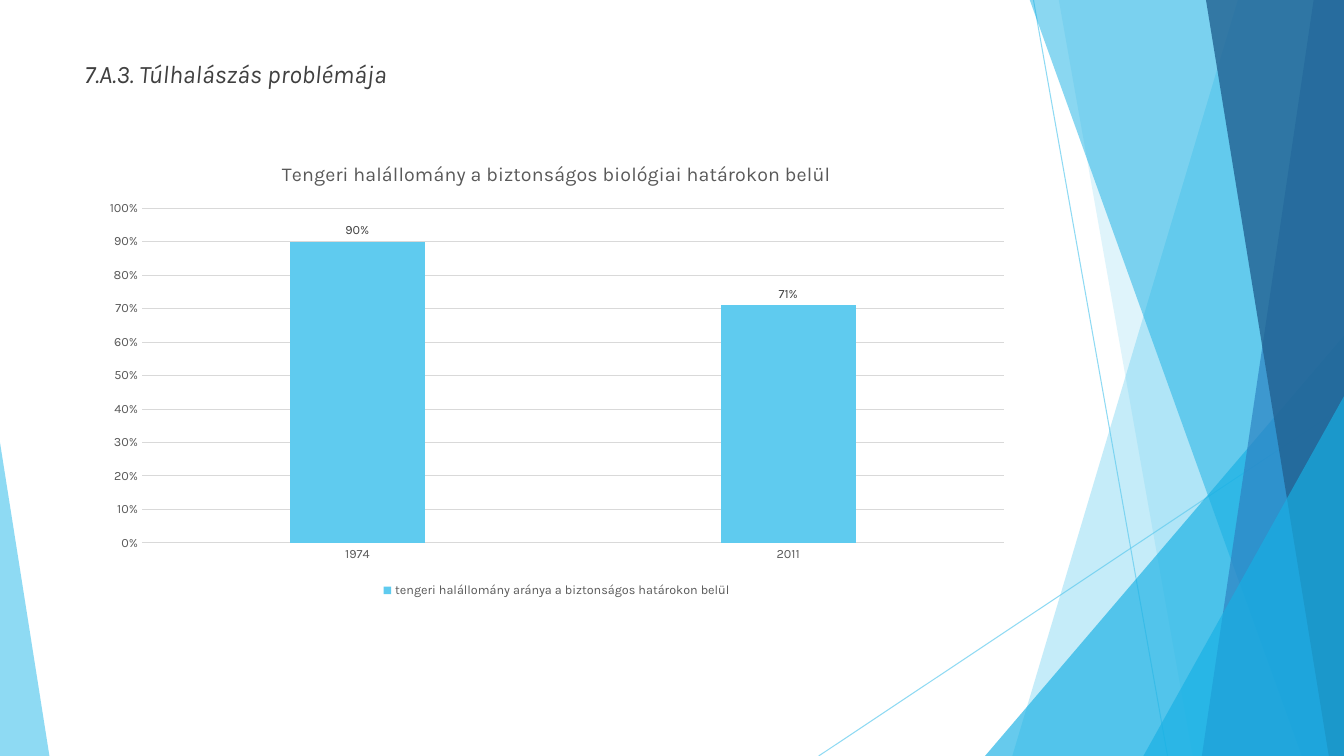
import pptx
import pptx.chart.data
import pptx.dml.color
import pptx.enum.chart
import pptx.enum.shapes
import pptx.oxml.ns
import pptx.util
from lxml import etree

Inches = pptx.util.Inches
Pt = pptx.util.Pt
WIDE, HIGH = 13.33, 7.5
TOP = -0.01
SKY, CYAN, BLUE, NAVY = "5FCBEF", "17B0E4", "2E83C3", "226292"
DARK, GREY, PALE = "404040", "595959", "D9D9D9"


def color(code):
    return pptx.dml.color.RGBColor.from_string(code)


def add(parent, tag, **attrs):
    return etree.SubElement(parent, pptx.oxml.ns.qn(tag), attrs)


class Deck:
    font = "Karla"

    def __init__(self):
        self.prs = pptx.Presentation()
        self.prs.slide_width = Inches(WIDE)
        self.prs.slide_height = Inches(HIGH)
        self.slide = self.prs.slides.add_slide(self.prs.slide_layouts[6])
        self.shapes = self.slide.shapes

    def style(self, font, size, code):
        font.name = self.font
        font.size = Pt(size)
        font.color.rgb = color(code)

    def fade(self, fill, alpha):
        """Set the opacity of a solid fill in percent."""
        tone = fill.find(".//" + pptx.oxml.ns.qn("a:srgbClr"))
        add(tone, "a:alpha", val=str(alpha * 1000))

    def paint(self, shape, code, alpha):
        shape.shadow.inherit = False
        shape.fill.solid()
        shape.fill.fore_color.rgb = color(code)
        shape.line.fill.background()
        self.fade(shape._element.spPr, alpha)

    def line(self, x1, y1, x2, y2):
        line = self.shapes.add_connector(
            pptx.enum.shapes.MSO_CONNECTOR.STRAIGHT,
            Inches(x1), Inches(y1), Inches(x2), Inches(y2))
        line.line.width = Pt(0.75)
        line.line.color.rgb = color(SKY)
        self.fade(line._element.spPr, 70)
        add(line._element.spPr, "a:effectLst")

    def band(self, top, foot, code, alpha):
        """Fill from a slanted left edge to the right edge of the slide."""
        pen = self.shapes.build_freeform(Inches(top), Inches(TOP), scale=1.0)
        ends = [(WIDE, TOP), (WIDE, HIGH), (foot, HIGH)]
        pen.add_line_segments([(Inches(x), Inches(y)) for x, y in ends])
        self.paint(pen.convert_to_shape(), code, alpha)

    def wedge(self, left, top, width, tip, code, alpha):
        """Triangle that stands on the foot of the slide."""
        shape = self.shapes.add_shape(
            pptx.enum.shapes.MSO_SHAPE.ISOSCELES_TRIANGLE,
            Inches(left), Inches(top), Inches(width), Inches(HIGH - top))
        shape.adjustments[0] = tip
        self.paint(shape, code, alpha)

    def text(self, words, left, top, width, height):
        frame = self.shapes.add_textbox(
            Inches(left), Inches(top), Inches(width), Inches(height)).text_frame
        frame.word_wrap = True
        frame.text = words
        para = frame.paragraphs[0]
        para.space_before = Pt(10)
        self.style(para.runs[0].font, 18, DARK)
        para.runs[0].font.italic = True

    def chart(self, title, name, cats, vals, left, top, width, height):
        kinds = pptx.enum.chart
        data = pptx.chart.data.CategoryChartData(number_format="0%")
        data.categories = cats
        data.add_series(name, vals)
        chart = self.shapes.add_chart(
            kinds.XL_CHART_TYPE.COLUMN_CLUSTERED, Inches(left), Inches(top),
            Inches(width), Inches(height), data).chart
        self.style(chart.font, 10, "000000")
        chart.has_title = True
        chart.chart_title.text_frame.text = title
        run = chart.chart_title.text_frame.paragraphs[0].runs[0]
        self.style(run.font, 14, GREY)
        run.font.bold = False
        chart.has_legend = True
        chart.legend.position = kinds.XL_LEGEND_POSITION.BOTTOM
        chart.legend.include_in_layout = False
        self.style(chart.legend.font, 9, GREY)

        for axis in (chart.category_axis, chart.value_axis):
            axis.major_tick_mark = kinds.XL_TICK_MARK.NONE
            axis.minor_tick_mark = kinds.XL_TICK_MARK.NONE
            self.style(axis.tick_labels.font, 9, GREY)
        axis.minimum_scale, axis.maximum_scale, axis.major_unit = 0, 1, 0.1
        axis.tick_labels.number_format = "0%"
        axis.tick_labels.number_format_is_linked = False
        axis.format.line.fill.background()
        for line in (chart.category_axis.format.line,
                     axis.major_gridlines.format.line):
            line.width = Pt(0.75)
            line.color.rgb = color(PALE)

        plot = chart.plots[0]
        plot.vary_by_categories = False
        plot.gap_width, plot.overlap = 219, -27
        bars = plot.series[0]
        bars.format.fill.solid()
        bars.format.fill.fore_color.rgb = color(SKY)
        labels = bars.data_labels
        labels.show_value = True
        labels.number_format = "0%"
        labels.number_format_is_linked = False
        labels.position = kinds.XL_LABEL_POSITION.OUTSIDE_END
        self.style(labels.font, 9, DARK)
        self.place(chart, x=0.055, y=0.142, w=0.925, h=0.73)

    def place(self, chart, **box):
        """Fix the inner plot area as shares of the chart."""
        area = chart._chartSpace.chart.plotArea
        for old in area.findall(pptx.oxml.ns.qn("c:layout")):
            area.remove(old)
        layout = add(area, "c:layout")
        area.insert(0, layout)
        manual = add(layout, "c:manualLayout")
        add(manual, "c:layoutTarget", val="inner")
        for side in "xy":
            add(manual, f"c:{side}Mode", val="edge")
        for key, share in box.items():
            add(manual, f"c:{key}", val=str(share))


def main():
    deck = Deck()
    deck.line(10.25, 0, 11.58, HIGH)
    deck.line(WIDE, 4.03, 8.12, HIGH)
    deck.band(12.28, 10.04, SKY, 36)
    deck.band(10.5, 11.83, SKY, 20)
    deck.wedge(9.77, 3.33, 3.56, 1, CYAN, 66)
    deck.band(10.21, 12.91, CYAN, 50)
    deck.band(13.03, 11.92, BLUE, 70)
    deck.band(11.96, 13.18, NAVY, 80)
    deck.wedge(11.34, 3.93, 1.99, 1, CYAN, 66)
    deck.wedge(0, 4.39, 0.49, 0, SKY, 70)
    deck.text("7.A.3. Túlhalászás problémája", 0.74, 0.53, 9.4, 6.08)
    deck.chart("Tengeri halállomány a biztonságos biológiai határokon belül",
               "tengeri halállomány aránya a biztonságos határokon belül",
               ["1974", "2011"], [0.9, 0.71], 0.9, 1.42, 9.24, 4.55)
    deck.prs.save("out.pptx")


if __name__ == "__main__":
    main()
